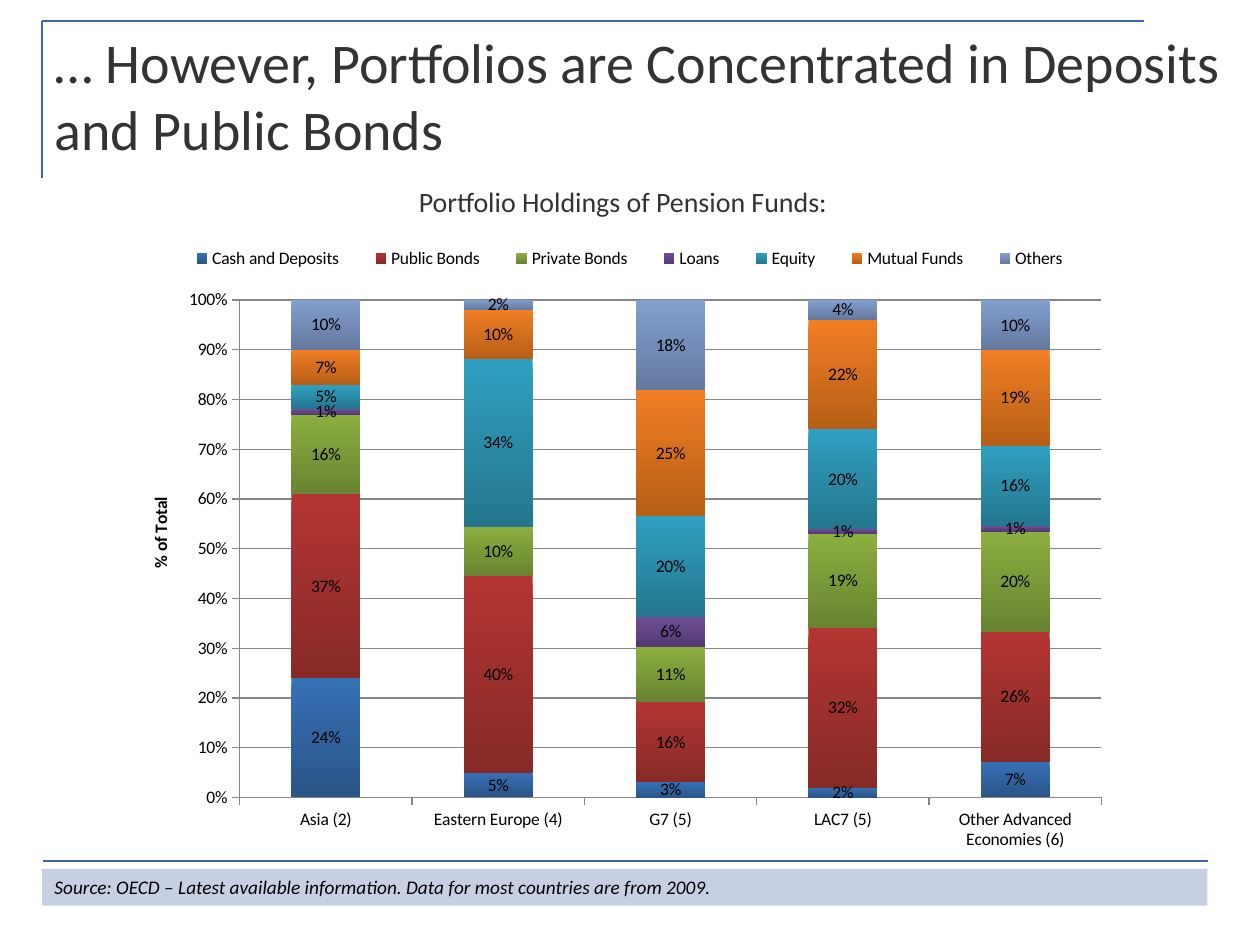
from dataclasses import dataclass
from typing import NamedTuple

from lxml.etree import SubElement
from pptx import Presentation
from pptx.chart.data import CategoryChartData
from pptx.dml.color import RGBColor as Rgb
from pptx.enum.chart import XL_CHART_TYPE as ChartType
from pptx.enum.chart import XL_LEGEND_POSITION as LegendPosition
from pptx.enum.chart import XL_TICK_MARK as TickMark
from pptx.enum.shapes import MSO_CONNECTOR as Connector
from pptx.enum.shapes import MSO_SHAPE as Shape
from pptx.enum.text import MSO_ANCHOR as Anchor
from pptx.enum.text import MSO_AUTO_SIZE as AutoSize
from pptx.enum.text import PP_ALIGN as Align
from pptx.oxml import parse_xml
from pptx.oxml.ns import nsdecls, qn
from pptx.util import Pt


@dataclass(frozen=True)
class Theme:
    font: str = "Calibri"
    text: str = "333333"
    black: str = "000000"
    rule: str = "4264B0"
    band: str = "C7D0E3"
    grid: str = "868686"
    title_size: float = 32
    subtitle_size: float = 16
    source_size: float = 11
    chart_size: float = 10


class Box(NamedTuple):
    left: float
    top: float
    width: float
    height: float

    def points(self) -> list:
        return [Pt(length) for length in self]


class Rule(NamedTuple):
    x1: float
    y1: float
    x2: float
    y2: float


class Holding(NamedTuple):
    name: str
    shares: tuple
    top_color: str
    bottom_color: str


THEME = Theme()
RULES = [
    Rule(654, 12, 24, 12),
    Rule(24, 12, 24, 102),
    Rule(690.5, 492, 24.5, 492),
]
REGIONS = ["Asia (2)", "Eastern Europe (4)", "G7 (5)", "LAC7 (5)", "Other Advanced Economies (6)"]
HOLDINGS = [
    Holding("Cash and Deposits", (0.24, 0.05, 0.03, 0.02, 0.07), "3670B5", "2A5587"),
    Holding("Public Bonds", (0.37, 0.4, 0.16, 0.32, 0.26), "B33532", "872A27"),
    Holding("Private Bonds", (0.16, 0.1, 0.11, 0.19, 0.2), "8BAE3F", "698431"),
    Holding("Loans", (0.01, 0, 0.06, 0.01, 0.01), "6F4E98", "533A72"),
    Holding("Equity", (0.05, 0.34, 0.2, 0.2, 0.16), "2F9FC0", "24778F"),
    Holding("Mutual Funds", (0.07, 0.1, 0.25, 0.22, 0.19), "F07E24", "B75F17"),
    Holding("Others", (0.1, 0.02, 0.18, 0.04, 0.1), "829FCF", "64799F"),
]


def style_font(font, size: float, color: str, bold: bool = False, italic: bool = False) -> None:
    font.name = THEME.font
    font.size = Pt(size)
    font.color.rgb = Rgb.from_string(color)
    font.bold = bold
    font.italic = italic


def write(frame, text: str, size: float, color: str, align=Align.LEFT, italic: bool = False) -> None:
    frame.text = text
    para = frame.paragraphs[0]
    para.alignment = align
    style_font(para.runs[0].font, size, color, italic=italic)


def add_rule(page, rule: Rule) -> None:
    line = page.shapes.add_connector(Connector.STRAIGHT, *[Pt(length) for length in rule])
    line.line.color.rgb = Rgb.from_string(THEME.rule)
    line.line.width = Pt(1.5)
    SubElement(line._element.spPr, qn("a:effectLst"))


def set_layout(element, **fractions: float) -> None:
    """Place a chart part by fractions of the chart area."""
    for old in element.findall(qn("c:layout")):
        element.remove(old)
    target = '<c:layoutTarget val="inner"/>' if element.tag == qn("c:plotArea") else ""
    modes = '<c:xMode val="edge"/><c:yMode val="edge"/>'
    sizes = "".join(f'<c:{key} val="{value}"/>' for key, value in fractions.items())
    layout = parse_xml(
        f'<c:layout {nsdecls("c")}><c:manualLayout>{target}{modes}{sizes}</c:manualLayout></c:layout>'
    )
    # The layout follows the legend position or the title text
    leaders = (qn("c:legendPos"), qn("c:tx"))
    element.insert(sum(child.tag in leaders for child in element), layout)


def style_series(series, holding: Holding) -> None:
    fill = series.format.fill
    fill.gradient()
    fill.gradient_angle = 270
    for stop, color in zip(fill.gradient_stops, (holding.top_color, holding.bottom_color)):
        stop.color.rgb = Rgb.from_string(color)
    labels = series.data_labels
    labels.show_value = True
    labels.number_format = "0%"
    labels.number_format_is_linked = False
    style_font(labels.font, THEME.chart_size, THEME.black)
    # Empty holdings carry no label
    empty = [index for index, share in enumerate(holding.shares) if share == 0]
    for place, index in enumerate(empty):
        hidden = parse_xml(
            f'<c:dLbl {nsdecls("c")}><c:idx val="{index}"/><c:delete val="1"/></c:dLbl>'
        )
        labels._element.insert(place, hidden)


def style_axis(axis) -> None:
    axis.major_tick_mark = TickMark.OUTSIDE
    axis.minor_tick_mark = TickMark.NONE
    axis.format.line.color.rgb = Rgb.from_string(THEME.grid)
    style_font(axis.tick_labels.font, THEME.chart_size, THEME.black)


def add_holdings_chart(page, box: Box) -> None:
    data = CategoryChartData(number_format="0%")
    data.categories = REGIONS
    for holding in HOLDINGS:
        data.add_series(holding.name, holding.shares)
    chart = page.shapes.add_chart(ChartType.COLUMN_STACKED_100, *box.points(), data).chart
    style_font(chart.font, THEME.chart_size, THEME.black)
    chart.has_title = False

    # Columns
    plot = chart.plots[0]
    plot.gap_width = 150
    plot.overlap = 100
    plot.vary_by_categories = False
    for series, holding in zip(plot.series, HOLDINGS):
        style_series(series, holding)

    # Axes
    style_axis(chart.category_axis)
    values = chart.value_axis
    style_axis(values)
    values.minimum_scale, values.maximum_scale, values.major_unit = 0, 1, 0.1
    values.tick_labels.number_format = "0%"
    values.tick_labels.number_format_is_linked = False
    values.major_gridlines.format.line.color.rgb = Rgb.from_string(THEME.grid)
    title = values.axis_title
    title.text_frame.text = "% of Total"
    style_font(title.text_frame.paragraphs[0].runs[0].font, THEME.chart_size, THEME.black, bold=True)

    # Legend and placement
    chart.has_legend = True
    chart.legend.position = LegendPosition.TOP
    chart.legend.include_in_layout = False
    style_font(chart.legend.font, THEME.chart_size, THEME.black)
    set_layout(chart.legend._element, x=0.04, y=0.04, w=0.93, h=0.06)
    set_layout(title._element, x=0.02, y=0.41)
    set_layout(chart._chartSpace.chart.plotArea, x=0.114, y=0.13, w=0.864, h=0.718)


def main() -> None:
    deck = Presentation()
    deck.slide_width, deck.slide_height = Pt(720), Pt(540)
    page = deck.slides.add_slide(deck.slide_layouts[5])

    # Frame lines and chart
    for rule in RULES:
        add_rule(page, rule)
    add_holdings_chart(page, Box(72, 120, 570, 396))

    # Title
    title = page.shapes.title
    title.left, title.top, title.width, title.height = Box(24, 12, 684, 84).points()
    frame = title.text_frame
    write(frame, "… However, Portfolios are Concentrated in Deposits and Public Bonds",
          THEME.title_size, THEME.text)
    frame.vertical_anchor = Anchor.MIDDLE
    frame.auto_size = AutoSize.NONE

    # Source band
    band = page.shapes.add_shape(Shape.RECTANGLE, *Box(24, 496.5, 666, 21).points())
    band.shadow.inherit = False
    band.fill.solid()
    band.fill.fore_color.rgb = Rgb.from_string(THEME.band)
    band.line.fill.background()
    write(band.text_frame,
          "Source: OECD – Latest available information. Data for most countries are from 2009.",
          THEME.source_size, THEME.black, italic=True)

    # Chart heading
    heading = page.shapes.add_textbox(*Box(228, 102, 256, 27).points())
    heading.text_frame.word_wrap = False
    write(heading.text_frame, "Portfolio Holdings of Pension Funds:",
          THEME.subtitle_size, THEME.text, Align.CENTER)

    deck.save("out.pptx")


if __name__ == "__main__":
    main()
